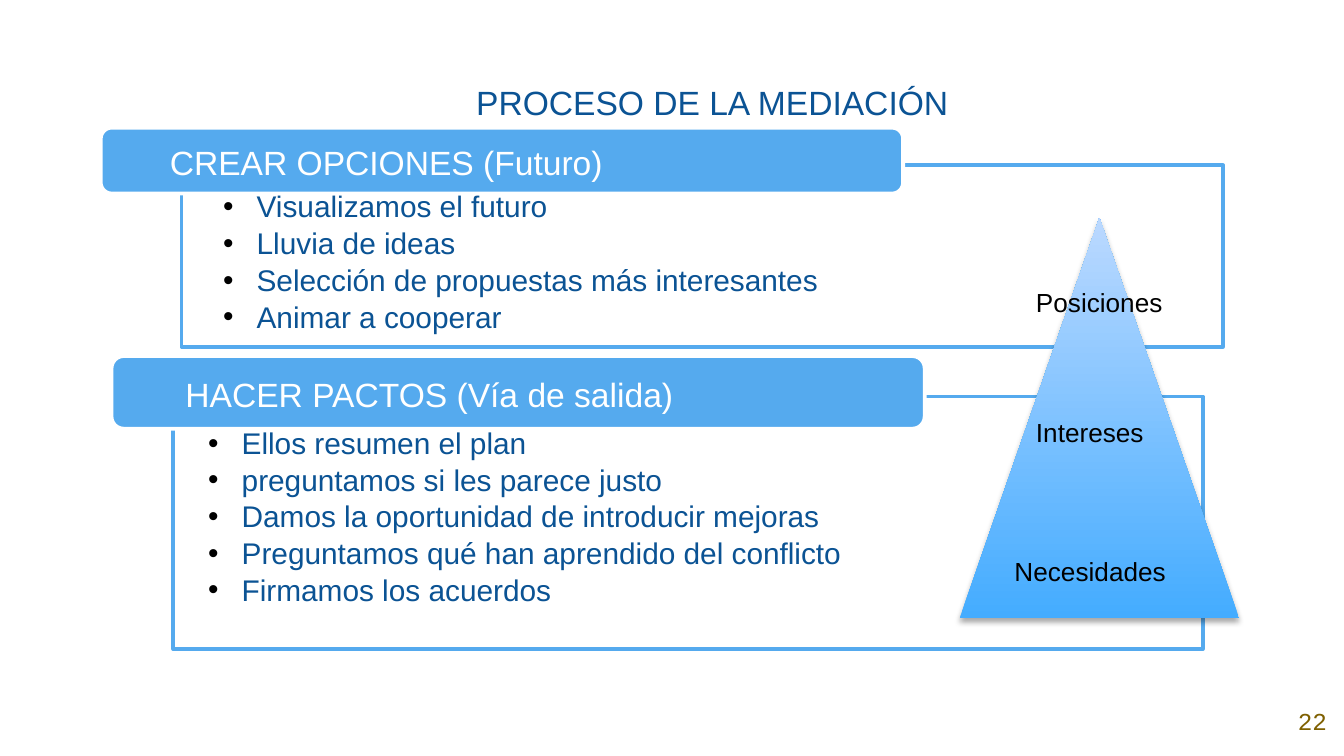
from lxml import etree
from pptx import Presentation
from pptx.dml.color import RGBColor
from pptx.enum.shapes import MSO_SHAPE
from pptx.enum.text import MSO_ANCHOR, PP_ALIGN
from pptx.oxml import parse_xml
from pptx.oxml.ns import nsdecls, qn
from pptx.util import Inches, Pt

WHITE = RGBColor(0xFF, 0xFF, 0xFF)
BLACK = RGBColor(0x00, 0x00, 0x00)
SKY = RGBColor(0x55, 0xAA, 0xEE)
NAVY = RGBColor(0x0B, 0x53, 0x94)
OLIVE = RGBColor(0x7F, 0x60, 0x00)
PYRAMID_BASE = RGBColor(0x44, 0xAC, 0xFF)
PYRAMID_TOP = RGBColor(0xBB, 0xD9, 0xFF)

OPTIONS = [
    "Visualizamos el futuro",
    "Lluvia de ideas",
    "Selección de propuestas más interesantes",
    "Animar a cooperar",
]
PACTS = [
    "Ellos resumen el plan",
    "preguntamos si les parece justo",
    "Damos la oportunidad de introducir mejoras",
    "Preguntamos qué han aprendido del conflicto",
    "Firmamos los acuerdos",
]
PYRAMID_LABELS = [
    ("Intereses", 7.61, 3.05),
    ("Posiciones", 7.61, 2.08),
    ("Necesidades", 7.45, 4.08),
]


def set_indent(p, left, first):
    pPr = p._p.get_or_add_pPr()
    pPr.set("marL", str(Inches(left)))
    pPr.set("indent", str(Inches(first)))
    return pPr


def add_bullet(p):
    pPr = set_indent(p, 0.25, -0.25)
    color = etree.SubElement(pPr, qn("a:buClr"))
    etree.SubElement(color, qn("a:srgbClr"), val=str(BLACK))
    etree.SubElement(pPr, qn("a:buFont"), typeface="Arial")
    etree.SubElement(pPr, qn("a:buChar"), char="•")


def add_text(s, text, at, size=16, color=NAVY, font="Arial", align=None,
             anchor=MSO_ANCHOR.TOP, insets=(0.1, 0.05, 0.1, 0.05),
             bullets=False, indent=None):
    tf = s.shapes.add_textbox(*map(Inches, at)).text_frame
    tf.word_wrap = True
    tf.vertical_anchor = anchor
    (tf.margin_left, tf.margin_top,
     tf.margin_right, tf.margin_bottom) = map(Inches, insets)
    lines = [text] if isinstance(text, str) else text
    for i, line in enumerate(lines):
        p = tf.add_paragraph() if i else tf.paragraphs[0]
        if bullets:
            p.level = 1
            p.line_spacing = 0.9
            p.space_after = Pt(2.4)
            add_bullet(p)
        if indent:
            set_indent(p, *indent)
        if align is not None:
            p.alignment = align
        r = p.add_run()
        r.text = line
        r.font.size = Pt(size)
        r.font.name = font
        r.font.color.rgb = color


def add_panel(s, kind, at, fill, line):
    sp = s.shapes.add_shape(kind, *map(Inches, at))
    sp.shadow.inherit = False
    sp.fill.solid()
    sp.fill.fore_color.rgb = fill
    sp.line.color.rgb = line
    sp.line.width = Pt(2)


def add_frame(s, at):
    add_panel(s, MSO_SHAPE.RECTANGLE, at, WHITE, SKY)


def add_banner(s, at, text, text_at, align):
    add_panel(s, MSO_SHAPE.ROUNDED_RECTANGLE, at, SKY, WHITE)
    add_text(s, text, text_at, size=18, color=WHITE, align=align,
             anchor=MSO_ANCHOR.MIDDLE, insets=(0.25, 0, 0.25, 0))


def add_pyramid(s, at):
    sp = s.shapes.add_shape(MSO_SHAPE.ISOSCELES_TRIANGLE, *map(Inches, at))
    sp.line.fill.background()
    sp.fill.gradient()
    sp.fill.gradient_angle = 90
    for stop, color in zip(sp.fill.gradient_stops, (PYRAMID_BASE, PYRAMID_TOP)):
        stop.color.rgb = color
    sp.shadow.inherit = False
    effects = sp._element.spPr.find(qn("a:effectLst"))
    effects.append(parse_xml(
        f'<a:outerShdw {nsdecls("a")} blurRad="{Pt(3.1)}" dist="{Pt(1.8)}" '
        'dir="5400000" rotWithShape="0"><a:srgbClr val="000000">'
        '<a:alpha val="35000"/></a:srgbClr></a:outerShdw>'))


def main():
    prs = Presentation()
    prs.slide_width = Inches(10)
    prs.slide_height = prs.slide_width * 9 // 16
    s = prs.slides.add_slide(prs.slide_layouts[6])

    add_frame(s, (1.29, 2.95, 7.66, 1.88))
    add_text(s, "PROCESO DE LA MEDIACIÓN", (1.02, 0.49, 8.31, 0.57), size=18,
             align=PP_ALIGN.CENTER, insets=(0.1, 0.12, 0.1, 0.1),
             indent=(0.5, -0.25))
    add_text(s, "22", (9.53, 5.11, 0.47, 0.51), size=13, color=OLIVE,
             font="Courier New", align=PP_ALIGN.CENTER,
             anchor=MSO_ANCHOR.MIDDLE, insets=(0.1,) * 4)

    add_frame(s, (1.35, 1.23, 7.75, 1.35))
    add_text(s, OPTIONS, (0.93, 0.98, 8.61, 1.75), bullets=True,
             insets=(0.73, 0.45, 0.73, 0.16))
    add_banner(s, (0.75, 0.95, 5.97, 0.49), "CREAR OPCIONES (Futuro)",
               (0, 1.08, 5.75, 0.26), PP_ALIGN.CENTER)

    add_banner(s, (0.83, 2.65, 6.05, 0.54), "HACER PACTOS (Vía de salida)",
               (1.13, 2.81, 6.59, 0.24), PP_ALIGN.LEFT)
    add_text(s, PACTS, (1.45, 3.14, 7.18, 1.47), bullets=True)

    add_pyramid(s, (7.14, 1.62, 2.08, 2.98))
    for label, left, top in PYRAMID_LABELS:
        add_text(s, label, (left, top, 1.54, 0.34), size=14, color=BLACK)

    prs.save("out.pptx")


if __name__ == "__main__":
    main()
